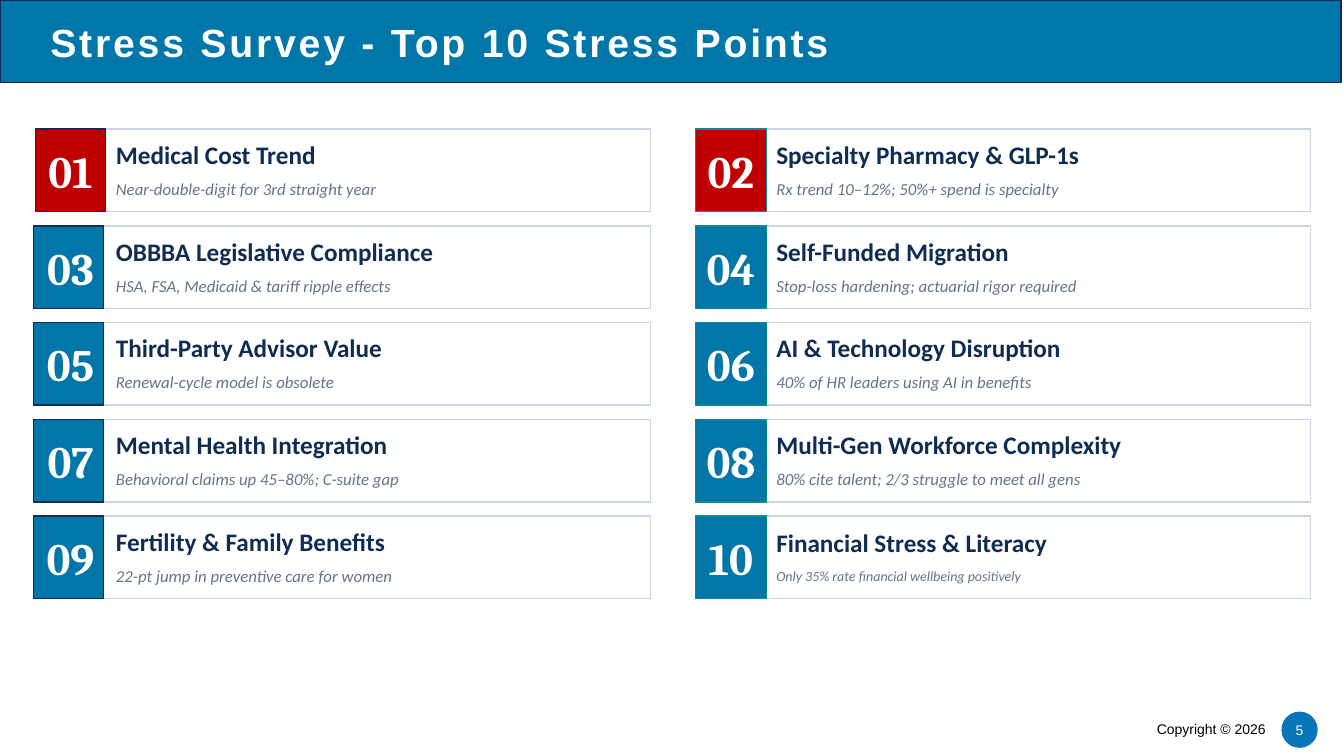
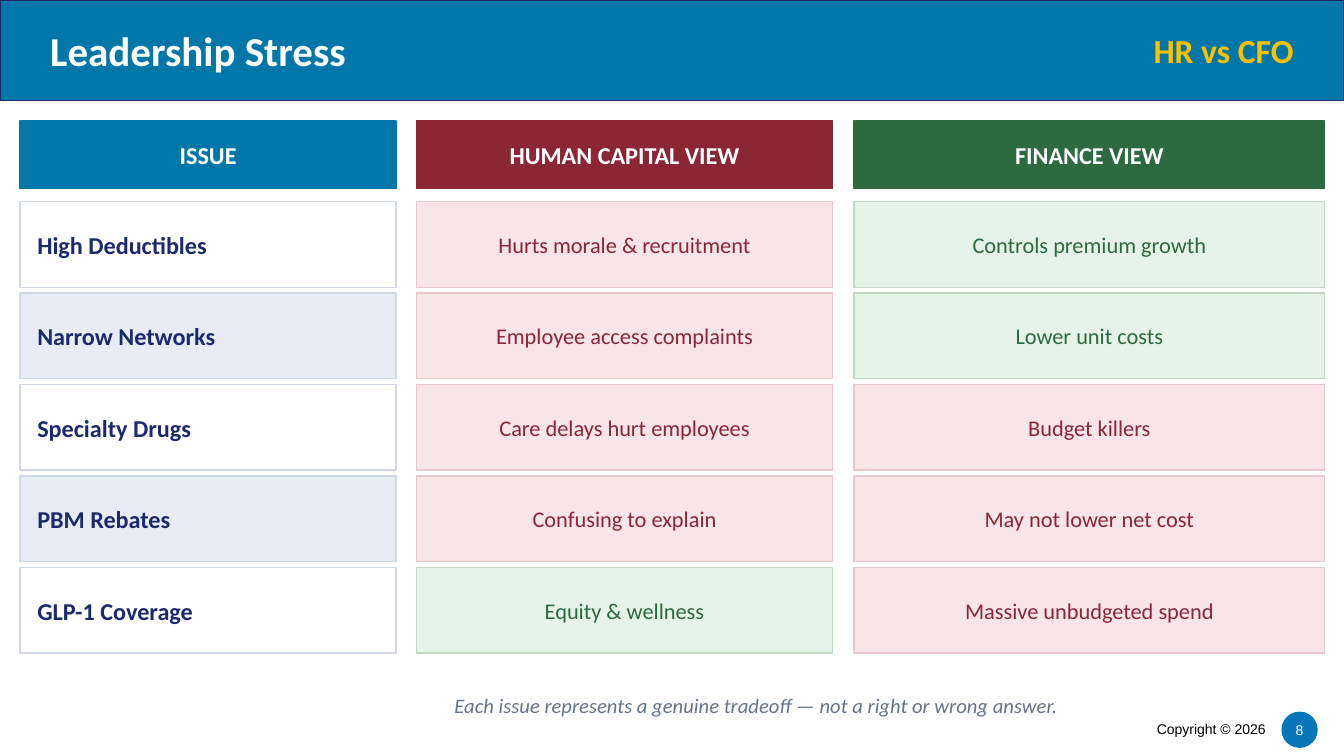
from pptx import Presentation
from pptx.dml.color import RGBColor
from pptx.enum.shapes import MSO_SHAPE
from pptx.enum.text import MSO_ANCHOR, PP_ALIGN
from pptx.util import Inches, Pt

W, H = 13.33, 7.5
C = {
    "white": "FFFFFF", "black": "000000", "blue": "0077A8", "badge": "0675BA",
    "navy": "0F2D52", "indigo": "1B2A6B", "slate": "64748B", "gold": "FFC000",
    "red": "C00000", "teal": "0A8A8A", "card_line": "CBD5E1",
    "wine": "8B2635", "wine_fill": "F9E5E8", "wine_line": "E8C8CD",
    "green": "2D6A3F", "green_fill": "E6F3E8", "green_line": "C0D8C4",
    "stripe": "E8EDF5", "stripe_line": "D0D8E8",
}
LEFT, CENTER, RIGHT = PP_ALIGN.LEFT, PP_ALIGN.CENTER, PP_ALIGN.RIGHT
NO_INSET = (0, 0, 0, 0)
INSET = (0.1, 0.05, 0.1, 0.05)

STRESS_POINTS = [
    ("Medical Cost Trend", "Near-double-digit for 3rd straight year"),
    ("Specialty Pharmacy & GLP-1s", "Rx trend 10–12%; 50%+ spend is specialty"),
    ("OBBBA Legislative Compliance", "HSA, FSA, Medicaid & tariff ripple effects"),
    ("Self-Funded Migration", "Stop-loss hardening; actuarial rigor required"),
    ("Third-Party Advisor Value", "Renewal-cycle model is obsolete"),
    ("AI & Technology Disruption", "40% of HR leaders using AI in benefits"),
    ("Mental Health Integration", "Behavioral claims up 45–80%; C-suite gap"),
    ("Multi-Gen Workforce Complexity", "80% cite talent; 2/3 struggle to meet all gens"),
    ("Fertility & Family Benefits", "22-pt jump in preventive care for women"),
    ("Financial Stress & Literacy", "Only 35% rate financial wellbeing positively"),
]

COLUMNS = [
    ("ISSUE", "blue", 0.2, 3.73),
    ("HUMAN CAPITAL VIEW", "wine", 4.13, 4.13),
    ("FINANCE VIEW", "green", 8.47, 4.67),
]
TRADEOFFS = [
    ("High Deductibles", ("Hurts morale & recruitment", "wine"), ("Controls premium growth", "green")),
    ("Narrow Networks", ("Employee access complaints", "wine"), ("Lower unit costs", "green")),
    ("Specialty Drugs", ("Care delays hurt employees", "wine"), ("Budget killers", "wine")),
    ("PBM Rebates", ("Confusing to explain", "wine"), ("May not lower net cost", "wine")),
    ("GLP-1 Coverage", ("Equity & wellness", "green"), ("Massive unbudgeted spend", "wine")),
]
FOOTNOTE = "Each issue represents a genuine tradeoff — not a right or wrong answer."


def rgb(name):
    return RGBColor.from_string(C[name])


def add_box(slide, at, fill, line=None, shape=MSO_SHAPE.RECTANGLE):
    sp = slide.shapes.add_shape(shape, *map(Inches, at))
    sp.shadow.inherit = False
    sp.fill.solid()
    sp.fill.fore_color.rgb = rgb(fill)
    if line:
        sp.line.color.rgb = rgb(line)
        sp.line.width = Pt(1)
    else:
        sp.line.fill.background()
    return sp


def add_label(slide, at):
    return slide.shapes.add_textbox(*map(Inches, at))


def set_frame(sp, inset):
    tf = sp.text_frame
    tf.word_wrap = True
    tf.vertical_anchor = MSO_ANCHOR.MIDDLE
    tf.margin_left, tf.margin_top, tf.margin_right, tf.margin_bottom = map(Inches, inset)
    return tf


def add_run(p, text, size, color, font="Calibri", bold=False, italic=False, align=LEFT):
    p.alignment = align
    r = p.add_run()
    r.text = text
    r.font.size, r.font.name = Pt(size), font
    r.font.bold, r.font.italic = bold, italic
    r.font.color.rgb = rgb(color)
    return r


def write(sp, text, size, color, inset=INSET, **style):
    return add_run(set_frame(sp, inset).paragraphs[0], text, size, color, **style)


def new_slide(prs, number, band_width, band_height, band_line):
    slide = prs.slides.add_slide(prs.slide_layouts[6])
    circle = add_box(slide, (12.71, 7.06, 0.36, 0.36), "badge", shape=MSO_SHAPE.OVAL)
    write(circle, str(number), 10, "white", NO_INSET, font="Arial", align=CENTER)
    write(add_label(slide, (8.93, 7.1, 3.72, 0.27)), "Copyright © 2026", 10, "black",
          font="Arial", align=RIGHT)
    add_box(slide, (0, 0, band_width, band_height), "blue", band_line)
    return slide


def build_survey(prs):
    slide = new_slide(prs, 5, 13.3, 0.82, "navy")
    r = write(add_label(slide, (0.5, 0.14, 12.5, 0.55)), "Stress Survey - Top 10 Stress Points",
              28, "white", NO_INSET, font="Arial", bold=True)
    r.font._element.set("spc", "200")

    card_w, card_h, badge_w = 6.1, 0.82, 0.7
    for i, (title, detail) in enumerate(STRESS_POINTS):
        row, col = divmod(i, 2)
        x, y = 0.35 + col * 6.55, 1.28 + row * 0.96
        card = add_box(slide, (x, y, card_w, card_h), "white", "card_line")
        tf = set_frame(card, (0.8, 0, 0.1, 0.03))
        add_run(tf.paragraphs[0], title, 18, "navy", bold=True)
        p = tf.add_paragraph()
        p.space_before = Pt(6.6)
        last = i == len(STRESS_POINTS) - 1
        add_run(p, detail, 10 if last else 12, "slate", italic=True)

        nudge = 0.02 if row and not col else 0
        badge = add_box(slide, (x - nudge, y, badge_w, card_h),
                        "blue" if row else "red", "teal" if col else "navy")
        write(badge, f"{i + 1:02d}", 32, "white", (2 * nudge, 0, 0, 0),
              font="Cambria", bold=True, align=CENTER)


def build_leadership(prs):
    slide = new_slide(prs, 8, W, 1, "indigo")
    write(add_label(slide, (0.4, 0, 8, 1)), "Leadership Stress", 29.3, "white", bold=True)
    write(add_label(slide, (9.6, 0, 3.33, 1)), "HR vs CFO", 24, "gold", bold=True, align=RIGHT)

    for text, color, x, w in COLUMNS:
        head = add_box(slide, (x, 1.2, w, 0.67), color, color)
        write(head, text, 17.3, "white", bold=True, align=CENTER)

    row_step = 3.63 / (len(TRADEOFFS) - 1)
    for i, (issue, *views) in enumerate(TRADEOFFS):
        spots = [(x, 2 + i * row_step, w, 0.85) for _, _, x, w in COLUMNS]
        cell = add_box(slide, spots[0], "stripe" if i % 2 else "white", "stripe_line")
        write(cell, issue, 17.3, "indigo", (0.17, 0.05, 0.17, 0.05), bold=True)
        for spot, (text, tone) in zip(spots[1:], views):
            cell = add_box(slide, spot, f"{tone}_fill", f"{tone}_line")
            write(cell, text, 16, tone, align=CENTER)

    write(add_label(slide, (1.67, 6.73, W - 1.67, 0.53)), FOOTNOTE, 14.7, "slate",
          italic=True, align=CENTER)


def main():
    prs = Presentation()
    prs.slide_width, prs.slide_height = Inches(W), Inches(H)
    build_survey(prs)
    build_leadership(prs)
    prs.save("out.pptx")


if __name__ == "__main__":
    main()
